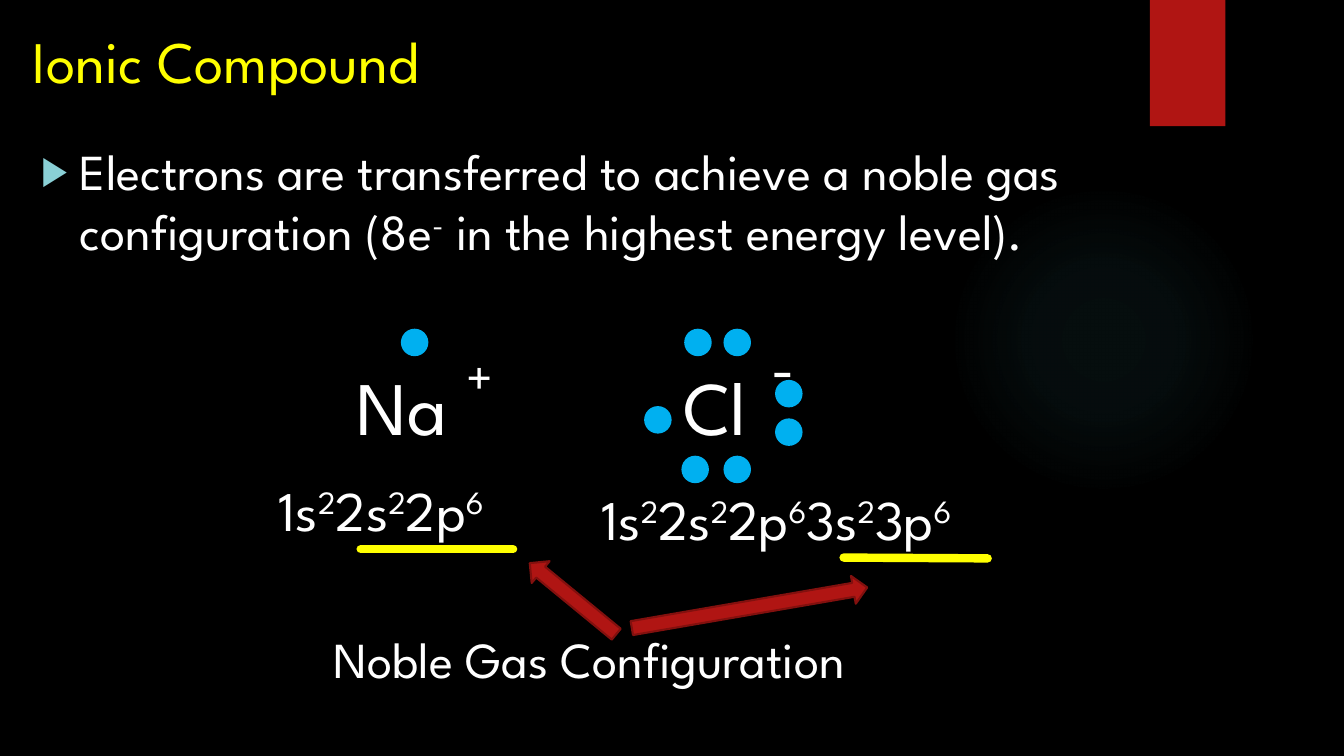
from dataclasses import dataclass

from lxml.etree import SubElement
from pptx import Presentation
from pptx.dml.color import RGBColor
from pptx.enum.shapes import MSO_CONNECTOR, MSO_SHAPE
from pptx.oxml import parse_xml
from pptx.oxml.ns import nsdecls, qn
from pptx.util import Cm, Pt


@dataclass(frozen=True)
class Theme:
    """Colours, font and type sizes of the slide."""

    font: str = "League Spartan"
    background: str = "000000"
    text: str = "FFFFFF"
    highlight: str = "FFFF00"
    accent: str = "B01513"
    accent_edge: str = "82100E"
    electron: str = "00B0F0"
    bullet: str = "8AD0D6"
    glow: str = "50B9C1"
    title_size: int = 42
    body_size: int = 36
    symbol_size: int = 54
    minus_size: int = 44
    configuration_size: int = 40


THEME = Theme()
ELECTRON_SIZE = 0.64
SODIUM_ELECTRONS = [(10.13, 8.31)]
CHLORINE_ELECTRONS = [
    (18.26, 8.31), (17.27, 8.31), (19.56, 9.6), (19.56, 10.57),
    (18.26, 11.51), (17.2, 11.51), (16.26, 10.26),
]


def color(value):
    """Turn a hexadecimal string into a colour."""
    return RGBColor.from_string(value)


def add_bullet(paragraph, indent=0.97):
    """Give a paragraph a hanging triangular bullet."""
    properties = paragraph._p.get_or_add_pPr()
    properties.set("marL", str(Cm(indent)))
    properties.set("indent", str(-Cm(indent)))
    bullet_color = SubElement(properties, qn("a:buClr"))
    SubElement(bullet_color, qn("a:srgbClr"), val=THEME.bullet)
    SubElement(properties, qn("a:buSzPct"), val="80000")
    SubElement(properties, qn("a:buFont"), typeface="Arial")
    SubElement(properties, qn("a:buChar"), char="▶")


def add_text(slide, text, box, size=THEME.body_size, fill=THEME.text, bullet=False):
    """Add a text box in which carets enclose superscripts."""
    frame = slide.shapes.add_textbox(*map(Cm, box)).text_frame
    frame.word_wrap = True
    paragraph = frame.paragraphs[0]
    if bullet:
        add_bullet(paragraph)
    for index, part in enumerate(text.split("^")):
        if not part:
            continue
        run = paragraph.add_run()
        run.text = part
        run.font.name = THEME.font
        run.font.size = Pt(size)
        run.font.color.rgb = color(fill)
        if index % 2:
            run._r.get_or_add_rPr().set("baseline", "30000")


def add_filled_shape(slide, kind, box, fill, edge=None, rotation=0):
    """Add a flat preset shape with an optional outline."""
    shape = slide.shapes.add_shape(kind, *map(Cm, box))
    shape.shadow.inherit = False
    shape.rotation = rotation
    shape.fill.solid()
    shape.fill.fore_color.rgb = color(fill)
    if edge:
        shape.line.color.rgb = color(edge)
        shape.line.width = Pt(1.5)
    else:
        shape.line.fill.background()
    return shape


def add_glow(slide, box):
    """Add a faint circle that fades out from its centre."""
    shape = add_filled_shape(slide, MSO_SHAPE.OVAL, box, THEME.glow)
    stops = "".join(
        f'<a:gs pos="{position}000"><a:srgbClr val="{THEME.glow}">'
        f'<a:alpha val="{alpha}000"/></a:srgbClr></a:gs>'
        for position, alpha in [(0, 7), (36, 6), (69, 0)]
    )
    gradient = parse_xml(
        f'<a:gradFill {nsdecls("a")} rotWithShape="1"><a:gsLst>{stops}</a:gsLst>'
        '<a:path path="circle"><a:fillToRect l="50000" t="50000" r="50000" b="50000"/>'
        "</a:path></a:gradFill>"
    )
    properties = shape._element.spPr
    properties.replace(properties.find(qn("a:solidFill")), gradient)


def add_electrons(slide, positions):
    """Add one dot for each electron position."""
    for left, top in positions:
        box = (left, top, ELECTRON_SIZE, ELECTRON_SIZE)
        add_filled_shape(slide, MSO_SHAPE.OVAL, box, THEME.electron, THEME.electron)


def add_underline(slide, start, end):
    """Add a thick line with round ends."""
    line = slide.shapes.add_connector(MSO_CONNECTOR.STRAIGHT, *map(Cm, start + end))
    line.line.color.rgb = color(THEME.highlight)
    line.line.width = Pt(6)
    properties = line._element.spPr
    properties.find(qn("a:ln")).set("cap", "rnd")
    SubElement(properties, qn("a:effectLst"))


def add_arrow(slide, box, rotation):
    """Add a rotated block arrow."""
    add_filled_shape(
        slide, MSO_SHAPE.RIGHT_ARROW, box, THEME.accent, THEME.accent_edge, rotation
    )


def main():
    """Build and save the ionic compound slide."""
    presentation = Presentation()
    presentation.slide_width = Cm(33.87)
    presentation.slide_height = Cm(19.05)
    slide = presentation.slides.add_slide(presentation.slide_layouts[6])
    slide.background.fill.solid()
    slide.background.fill.fore_color.rgb = color(THEME.background)

    add_glow(slide, (23.9, 4.65, 7.82, 7.82))
    add_filled_shape(slide, MSO_SHAPE.RECTANGLE, (28.98, 0, 1.9, 3.18), THEME.accent)
    add_text(slide, "Ionic Compound", (0.58, 0.51, 13.26, 2.16),
             size=THEME.title_size, fill=THEME.highlight)
    add_text(
        slide,
        "Electrons are transferred to achieve a noble gas configuration "
        "(8e^-^ in the highest energy level).",
        (0.79, 3.4, 31.75, 3.58),
        bullet=True,
    )

    add_text(slide, "Na", (8.74, 8.94, 3.43, 2.57), size=THEME.symbol_size)
    add_electrons(slide, SODIUM_ELECTRONS)
    add_text(slide, "Cl", (16.97, 8.94, 2.59, 2.57), size=THEME.symbol_size)
    add_electrons(slide, CHLORINE_ELECTRONS)
    add_text(slide, "+", (11.51, 8.56, 1.27, 1.8))
    add_text(slide, "-", (19.2, 8.15, 1.27, 2.13), size=THEME.minus_size)

    add_text(slide, "1s^2^2s^2^2p^6^", (6.78, 11.86, 6.73, 1.96),
             size=THEME.configuration_size)
    add_underline(slide, (9.09, 13.84), (12.93, 13.84))
    add_text(slide, "Noble Gas Configuration", (8.15, 15.7, 16.18, 1.8))
    add_text(slide, "1s^2^2s^2^2p^6^3s^2^3p^6^", (14.91, 12.09, 11.13, 1.96),
             size=THEME.configuration_size)
    add_underline(slide, (21.26, 14.05), (24.89, 14.07))
    add_arrow(slide, (13.03, 14.73, 2.82, 0.71), 219.4)
    add_arrow(slide, (15.88, 14.96, 6.02, 0.71), 350.2)

    presentation.save("out.pptx")


if __name__ == "__main__":
    main()
